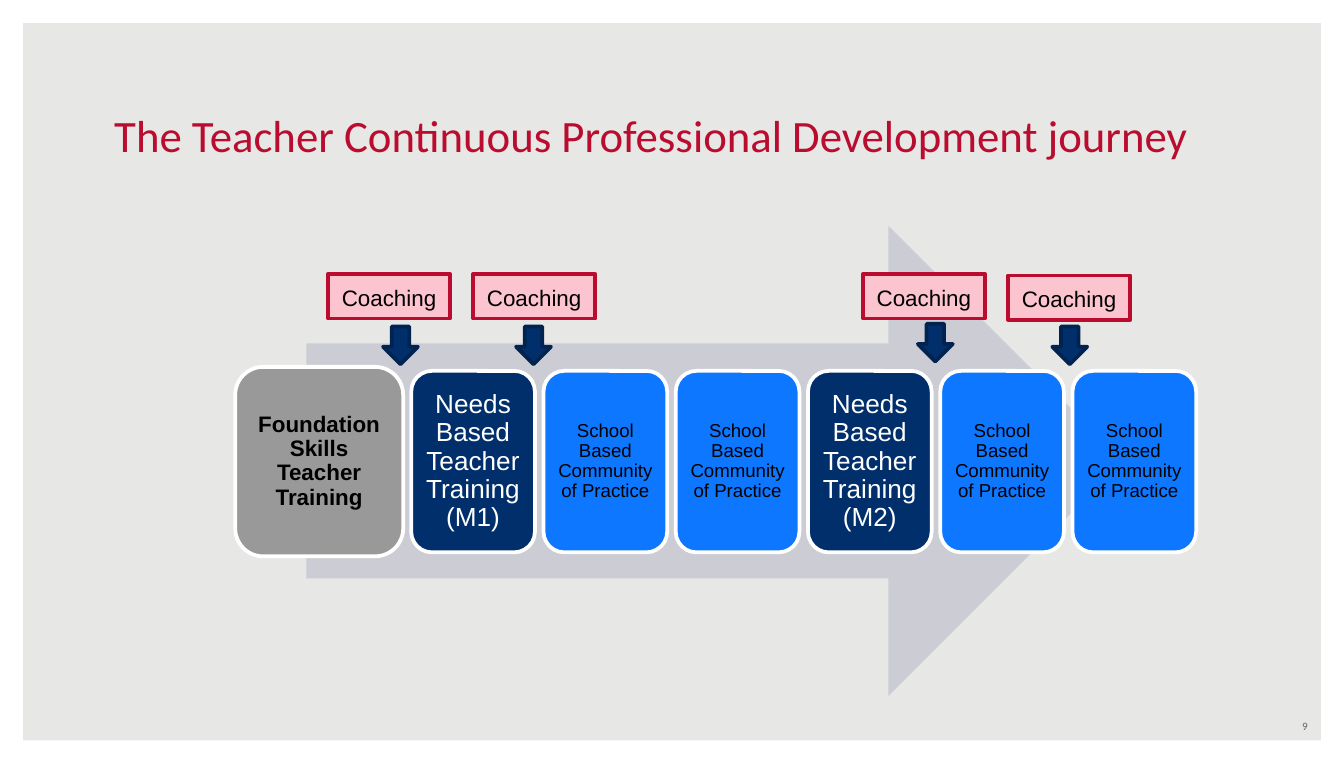
from dataclasses import dataclass

from pptx import Presentation
from pptx.dml.color import RGBColor
from pptx.enum.shapes import MSO_SHAPE
from pptx.enum.text import MSO_ANCHOR, MSO_AUTO_SIZE, PP_ALIGN
from pptx.util import Inches, Pt


@dataclass(frozen=True)
class Theme:
    """Colours, fonts and type sizes of the deck."""
    background: str = "E7E7E5"
    white: str = "FFFFFF"
    black: str = "000000"
    red: str = "BA0C2F"
    pink: str = "FBC4CF"
    navy: str = "002F6C"
    dark_navy: str = "002350"
    blue: str = "0E77FF"
    grey: str = "999999"
    pale: str = "CCCDD4"
    number: str = "6C6463"
    heading_font: str = "Calibri"
    body_font: str = "Arial"
    title_size: int = 24
    module_size: int = 14
    label_size: int = 12
    practice_size: int = 10
    number_size: int = 6
    outline: int = 2


THEME = Theme()


def write_text(shape, text, *, size, color, font=THEME.body_font, bold=False,
               align=PP_ALIGN.CENTER, anchor=MSO_ANCHOR.MIDDLE,
               insets=(0.1, 0.05), line_spacing=1.0):
    """Fill a shape with one formatted paragraph."""
    frame = shape.text_frame
    frame.word_wrap = True
    frame.auto_size = MSO_AUTO_SIZE.NONE
    frame.vertical_anchor = anchor
    frame.margin_left = frame.margin_right = Inches(insets[0])
    frame.margin_top = frame.margin_bottom = Inches(insets[1])
    para = frame.paragraphs[0]
    para.alignment = align
    para.line_spacing = line_spacing
    span = para.add_run()
    span.text = text
    span.font.name = font
    span.font.size = Pt(size)
    span.font.bold = bold
    span.font.color.rgb = RGBColor.from_string(color)


def draw_shape(page, kind, box, fill, line=None):
    """Add a flat preset shape in the given box."""
    shape = page.shapes.add_shape(kind, *map(Inches, box))
    shape.shadow.inherit = False
    shape.fill.solid()
    shape.fill.fore_color.rgb = RGBColor.from_string(fill)
    if line:
        shape.line.color.rgb = RGBColor.from_string(line)
        shape.line.width = Pt(THEME.outline)
    else:
        shape.line.fill.background()
    return shape


def draw_backdrop(page, box):
    """Paint the background and its white frame."""
    page.background.fill.solid()
    page.background.fill.fore_color.rgb = RGBColor.from_string(THEME.background)
    border = draw_shape(page, MSO_SHAPE.FRAME, box, THEME.white)
    border.adjustments[0] = 0.03


def draw_title(page, box, text):
    """Place and format the title placeholder."""
    title = page.shapes.title
    title.left, title.top, title.width, title.height = map(Inches, box)
    write_text(title, text, size=THEME.title_size, color=THEME.red,
               font=THEME.heading_font, align=PP_ALIGN.LEFT,
               anchor=MSO_ANCHOR.BOTTOM)


def draw_page_number(page, box, text):
    """Place the page number."""
    number = page.shapes.add_textbox(*map(Inches, box))
    write_text(number, text, size=THEME.number_size, color=THEME.number,
               font=THEME.heading_font, align=PP_ALIGN.RIGHT)


def draw_card(page, box, text, fill, inset, **text_format):
    """Draw one rounded stage of the journey."""
    card = draw_shape(page, MSO_SHAPE.ROUNDED_RECTANGLE, box, fill, THEME.white)
    write_text(card, text, insets=(inset, inset), line_spacing=0.9, **text_format)


def draw_journey(page, box):
    """Draw the wide arrow and the row of stages across it."""
    left, top, width, height = box
    draw_shape(page, MSO_SHAPE.RIGHT_ARROW,
               (left + 0.53, top, width - 1.07, height), THEME.pale)
    middle = top + height / 2 + 0.005
    draw_card(page, (left, middle - 0.705, 1.25, 1.41),
              "Foundation Skills Teacher Training", THEME.grey, 0.05,
              size=THEME.label_size, color=THEME.black, bold=True)
    module = dict(fill=THEME.navy, inset=0.06,
                  size=THEME.module_size, color=THEME.white)
    practice = dict(fill=THEME.blue, inset=0.04,
                    size=THEME.practice_size, color=THEME.black)
    practice_text = "School Based Community of Practice"
    card_width, card_height = 0.92, 1.35
    first = left + 1.31
    pitch = (left + width - card_width - first) / 5
    stages = []
    for name in ("M1", "M2"):
        stages.append((f"Needs Based Teacher Training ({name})", module))
        stages += [(practice_text, practice)] * 2
    for index, (text, style) in enumerate(stages):
        card_box = (first + index * pitch, middle - card_height / 2,
                    card_width, card_height)
        draw_card(page, card_box, text, **style)


def draw_coaching(page, box, arrow_left, arrow_top):
    """Draw a coaching label and the arrow below it."""
    label = draw_shape(page, MSO_SHAPE.RECTANGLE, box, THEME.pink, THEME.red)
    write_text(label, "Coaching", size=THEME.label_size, color=THEME.black,
               line_spacing=1.07)
    draw_shape(page, MSO_SHAPE.DOWN_ARROW, (arrow_left, arrow_top, 0.26, 0.28),
               THEME.navy, THEME.dark_navy)


def main():
    """Build and save the deck."""
    deck = Presentation()
    deck.slide_width, deck.slide_height = Inches(10), Inches(5.67)
    page = deck.slides.add_slide(deck.slide_layouts[5])
    draw_backdrop(page, (0, 0, 10, 5.68))
    draw_page_number(page, (7.5, 5.3, 2.33, 0.2), "9")
    draw_title(page, (0.75, 0.75, 8.5, 0.5),
               "The Teacher Continuous Professional Development journey")
    draw_journey(page, (1.75, 1.68, 7.15, 3.5))
    for left, top, arrow_left, arrow_top in (
        (2.44, 2.04, 2.85, 2.43),
        (3.52, 2.04, 3.84, 2.43),
        (6.42, 2.04, 6.83, 2.41),
        (7.5, 2.05, 7.83, 2.43),
    ):
        draw_coaching(page, (left, top, 0.91, 0.33), arrow_left, arrow_top)
    deck.save("out.pptx")


if __name__ == "__main__":
    main()
